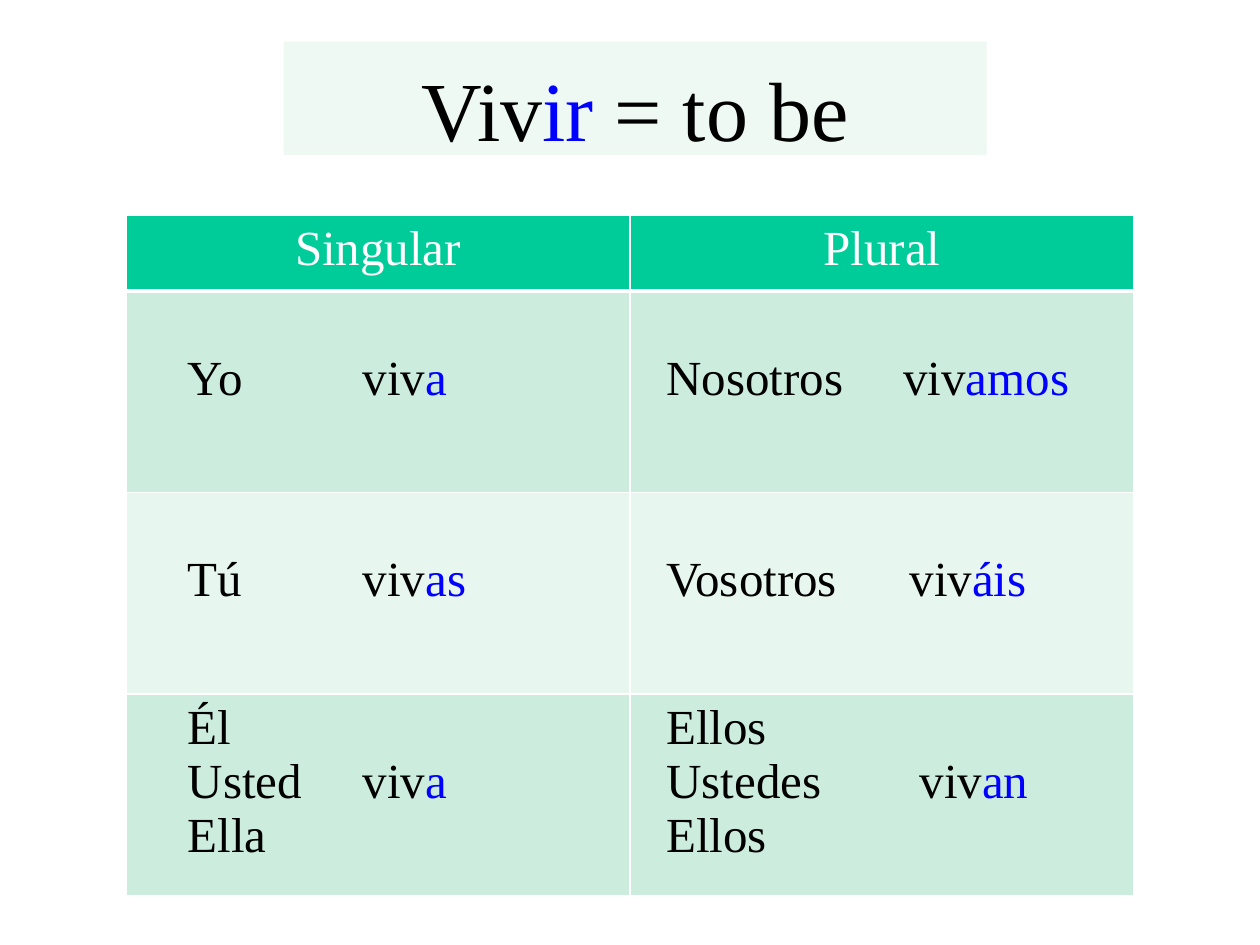
from lxml.etree import SubElement
from pptx import Presentation
from pptx.dml.color import RGBColor
from pptx.enum.shapes import MSO_SHAPE as Shape
from pptx.enum.text import MSO_ANCHOR as Anchor, PP_ALIGN as Align
from pptx.oxml.ns import qn
from pptx.util import Inches, Pt

BLACK, BLUE, WHITE = "000000", "0000FF", "FFFFFF"
TITLE = [("Viv", BLACK), ("ir", BLUE), (" = to be", BLACK)]
HEADINGS = ["Singular", "Plural"]
CONJUGATIONS = [
    [(["Yo"], "a", 1.39), (["Nosotros"], "amos", 1.88)],
    [(["Tú"], "as", 1.39), (["Vosotros"], "áis", 1.93)],
    [(["Él", "Usted", "Ella"], "a", 1.39),
     (["Ellos", "Ustedes", "Ellos"], "an", 2.01)],
]
INDENTS = [0.49, 0.29]
ROW_HEIGHTS = [0.6, 1.6, 1.6, 1.6]
BANDS = ["CCECDE", "E7F6EF"]
FONT = {"name": "Times New Roman", "bold": False}


def rgb(value):
    return RGBColor.from_string(value)


def paint(part, color):
    part.fill.solid()
    part.fill.fore_color.rgb = rgb(color)


def write(paragraph, pieces, size):
    for text, color in pieces:
        run = paragraph.add_run()
        run.text = text
        for key, value in {**FONT, "size": Pt(size)}.items():
            setattr(run.font, key, value)
        run.font.color.rgb = rgb(color)


def add_borders(cell, bottom, top):
    props = cell._tc.get_or_add_tcPr()
    for side, width in {"L": 1, "R": 1, "T": top, "B": bottom}.items():
        line = SubElement(props, qn(f"a:ln{side}"), w=str(Pt(width)))
        SubElement(SubElement(line, qn("a:solidFill")), qn("a:srgbClr"), val=WHITE)


def add_tab(paragraph, position):
    tabs = SubElement(paragraph._p.get_or_add_pPr(), qn("a:tabLst"))
    SubElement(tabs, qn("a:tab"), pos=str(Inches(position)), algn="l")


def fill_verb_cell(cell, pronouns, ending, tab, indent):
    cell.margin_left = Inches(indent)
    cell.margin_top = Inches(0.05 if len(pronouns) > 1 else 0.48)
    frame = cell.text_frame
    for index, pronoun in enumerate(pronouns):
        paragraph = frame.add_paragraph() if index else frame.paragraphs[0]
        if index == len(pronouns) // 2:
            add_tab(paragraph, tab)
            write(paragraph, [(f"{pronoun}\tviv", BLACK), (ending, BLUE)], 28)
        else:
            write(paragraph, [(pronoun, BLACK)], 28)


prs = Presentation()
prs.slide_width, prs.slide_height = Inches(10), Inches(7.5)
slide = prs.slides.add_slide(prs.slide_layouts[6])

title = slide.shapes.add_shape(
    Shape.RECTANGLE, Inches(2.25), Inches(0.33), Inches(5.58), Inches(0.9))
title.shadow.inherit = False
paint(title, "EEF9F4")
title.line.fill.background()
title_format = {"word_wrap": True, "vertical_anchor": Anchor.TOP,
                "margin_top": Inches(0.13), "margin_bottom": 0}
for key, value in title_format.items():
    setattr(title.text_frame, key, value)
heading = title.text_frame.paragraphs[0]
heading.alignment = Align.CENTER
write(heading, TITLE, 48)

table = slide.shapes.add_table(
    len(ROW_HEIGHTS), len(HEADINGS), Inches(1), Inches(1.71),
    Inches(8), Inches(sum(ROW_HEIGHTS))).table
table.first_row = table.horz_banding = False
for row, height in zip(table.rows, ROW_HEIGHTS):
    row.height = Inches(height)

for col, name in enumerate(HEADINGS):
    cell = table.cell(0, col)
    add_borders(cell, bottom=3, top=1)
    paint(cell, "00CC99")
    label = cell.text_frame.paragraphs[0]
    label.alignment = Align.CENTER
    write(label, [(name, WHITE)], 28)

for row, forms in enumerate(CONJUGATIONS):
    for col, (pronouns, ending, tab) in enumerate(forms):
        cell = table.cell(row + 1, col)
        add_borders(cell, bottom=1, top=1 if row else 3)
        paint(cell, BANDS[row % 2])
        fill_verb_cell(cell, pronouns, ending, tab, INDENTS[col])

prs.save("out.pptx")
